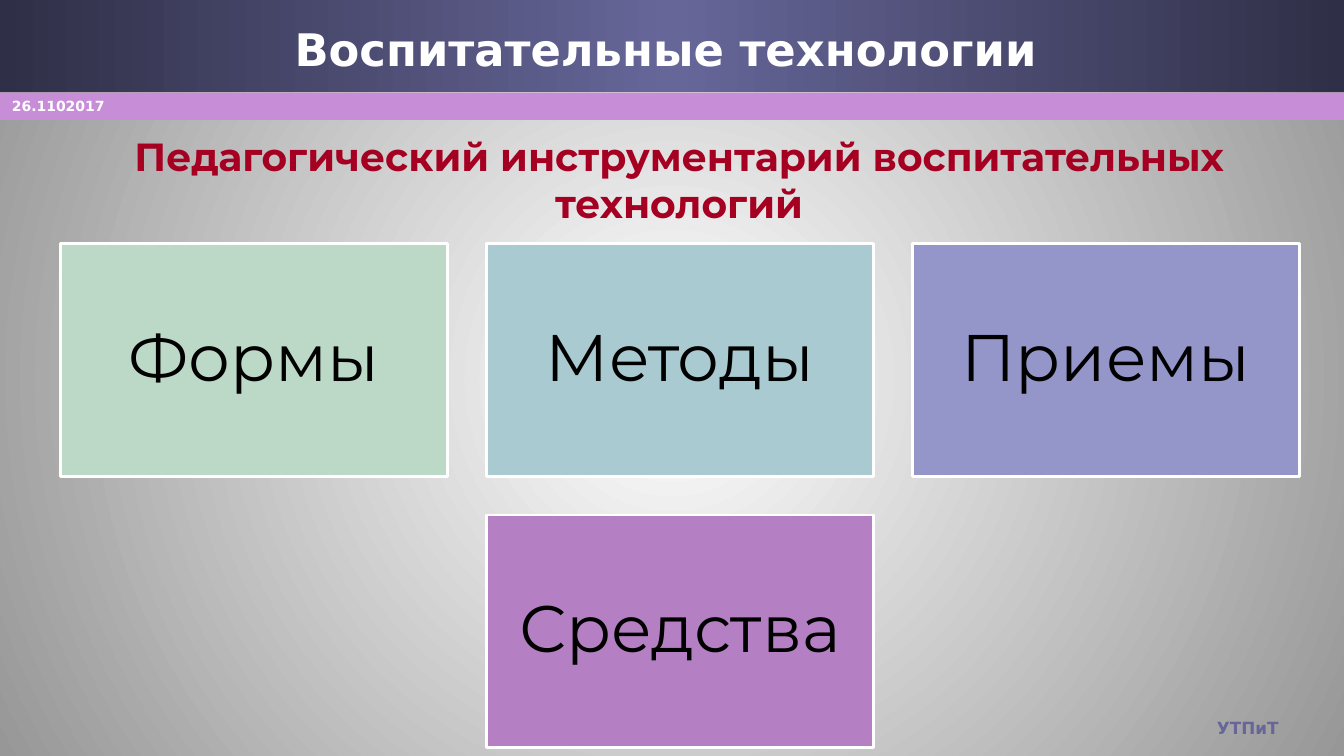
import pptx
import pptx.dml.color
import pptx.enum.shapes
import pptx.enum.text
import pptx.oxml
import pptx.oxml.ns
import pptx.util
from pptx.util import Inches

ALIGN = pptx.enum.text.PP_ALIGN
ANCHOR = pptx.enum.text.MSO_ANCHOR
DRAWING_NS = pptx.oxml.ns.nsdecls("a")

TOOLS = [
    ("Формы", "BCD8C6"),
    ("Методы", "A9CAD0"),
    ("Приемы", "9496C9"),
    ("Средства", "B47FC3"),
]
COLUMNS = 3


def rgb(value):
    return pptx.dml.color.RGBColor.from_string(value)


def set_gradient(fill, owner, stops, shading):
    """Fill with (percent, colour) stops; shading is the a:lin or a:path XML."""
    fill.gradient()
    gradient = next(owner.iter(pptx.oxml.ns.qn("a:gradFill")))
    for child in list(gradient):
        gradient.remove(child)
    stop_xml = "".join(
        f'<a:gs pos="{percent * 1000}"><a:srgbClr val="{colour}"/></a:gs>'
        for percent, colour in stops
    )
    gradient.append(pptx.oxml.parse_xml(f"<a:gsLst {DRAWING_NS}>{stop_xml}</a:gsLst>"))
    gradient.append(pptx.oxml.parse_xml(shading))


def add_rectangle(slide, box, colour=None):
    rectangle = slide.shapes.add_shape(
        pptx.enum.shapes.MSO_SHAPE.RECTANGLE, *map(Inches, box)
    )
    rectangle.shadow.inherit = False
    rectangle.line.fill.background()
    if colour:
        rectangle.fill.solid()
        rectangle.fill.fore_color.rgb = rgb(colour)
    return rectangle


def write(frame, text, size, colour, font="DejaVu Sans", bold=True,
          align=ALIGN.LEFT, anchor=ANCHOR.TOP):
    frame.word_wrap = True
    frame.vertical_anchor = anchor
    paragraph = frame.paragraphs[0]
    paragraph.alignment = align
    run = paragraph.add_run()
    run.text = text
    run.font.color.rgb = rgb(colour)
    formats = {"name": font, "size": pptx.util.Pt(size), "bold": bold}
    for attribute, value in formats.items():
        setattr(run.font, attribute, value)
    return paragraph


def add_text(slide, box, *content, **formats):
    label = slide.shapes.add_textbox(*map(Inches, box))
    write(label.text_frame, *content, **formats)


def paint_background(slide):
    set_gradient(
        slide.background.fill, slide.element, [(0, "FFFFFF"), (100, "979797")],
        f'<a:path {DRAWING_NS} path="circle">'
        '<a:fillToRect l="50000" t="50000" r="50000" b="50000"/></a:path>',
    )


def add_header(slide, left, top, width):
    banner = add_rectangle(slide, (left, top, width, 0.91))
    set_gradient(
        banner.fill, banner.element,
        [(0, "2F2F47"), (50, "666699"), (100, "2F2F47")],
        f'<a:lin {DRAWING_NS} ang="0" scaled="0"/>',
    )
    add_rectangle(slide, (left, top + 0.92, width, 0.27), "C78DD7")
    add_text(slide, (left + 0.44, top + 0.17, width - 1, 0.62),
             "Воспитательные технологии", 32, "FFFFFF",
             align=ALIGN.CENTER, anchor=ANCHOR.MIDDLE)
    add_text(slide, (left + 0.02, top + 0.92, width - 1, 0.25),
             "26.1102017", 10, "FFFFFF")


def add_card(slide, box, name, colour):
    card = add_rectangle(slide, box, colour)
    card.line.color.rgb = rgb("FFFFFF")
    card.line.width = pptx.util.Pt(2)
    frame = card.text_frame
    for side in ("left", "top", "right", "bottom"):
        setattr(frame, f"margin_{side}", Inches(0.2))
    paragraph = write(frame, name, 47, "000000", font="Montserrat", bold=False,
                      align=ALIGN.CENTER, anchor=ANCHOR.MIDDLE)
    paragraph.line_spacing = 0.9


def add_tool_grid(slide, left, top, width):
    """Lay the cards out in rows, centring a row that is not full."""
    gap = 0.385
    card_width = (width - gap * (COLUMNS - 1)) / COLUMNS
    card_height = card_width * 0.6
    for start in range(0, len(TOOLS), COLUMNS):
        row = TOOLS[start:start + COLUMNS]
        indent = (COLUMNS - len(row)) * (card_width + gap) / 2
        y = top + start // COLUMNS * (card_height + gap)
        for column, (name, colour) in enumerate(row):
            x = left + indent + column * (card_width + gap)
            add_card(slide, (x, y, card_width, card_height), name, colour)


def main():
    presentation = pptx.Presentation()
    presentation.slide_width = Inches(13.33)
    presentation.slide_height = Inches(7.5)
    slide = presentation.slides.add_slide(presentation.slide_layouts[6])
    paint_background(slide)
    add_header(slide, 0, 0, 13.33)
    add_text(slide, (8.56, 7.07, 4.22, 0.35), "УТПиТ", 12, "666699",
             align=ALIGN.RIGHT)
    add_tool_grid(slide, 0.6, 2.42, 12.29)
    add_text(slide, (0.81, 1.26, 11.85, 1.04),
             "Педагогический инструментарий воспитательных технологий",
             28, "A50021", font="Montserrat", align=ALIGN.CENTER)
    presentation.save("out.pptx")


if __name__ == "__main__":
    main()
